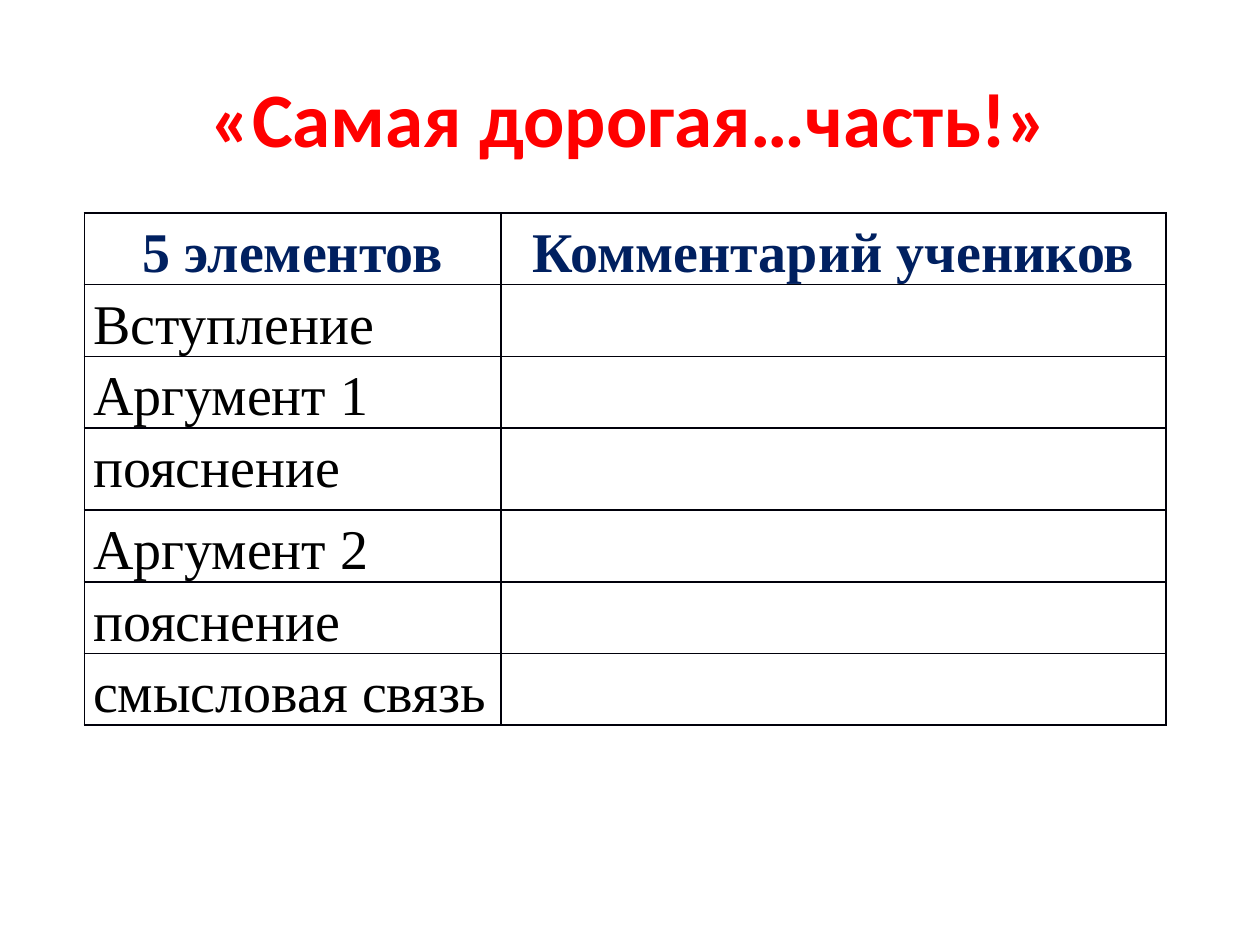
from dataclasses import dataclass

from lxml.etree import SubElement
from pptx import Presentation
from pptx.dml.color import RGBColor
from pptx.enum.text import MSO_ANCHOR, PP_ALIGN
from pptx.oxml.ns import qn
from pptx.util import Pt


@dataclass(frozen=True)
class Theme:
    title: str = "FF0000"
    header: str = "002060"
    text: str = "000000"
    cell: str = "FFFFFF"
    border: str = "00000A"
    title_font: str = "Calibri"
    table_font: str = "Times New Roman"
    title_size: int = 44
    table_size: int = 32


theme = Theme()


def add_run(p, text, font, size, color, bold):
    r = p.add_run()
    r.text = text
    r.font.name = font
    r.font.size = Pt(size)
    r.font.bold = bold
    r.font.color.rgb = RGBColor.from_string(color)


def add_borders(cell):
    tc_pr = cell._tc.get_or_add_tcPr()
    for side in ("lnL", "lnR", "lnT", "lnB"):
        ln = SubElement(tc_pr, qn(f"a:{side}"), w=str(Pt(1)))
        fill = SubElement(ln, qn("a:solidFill"))
        SubElement(fill, qn("a:srgbClr"), val=theme.border)


prs = Presentation()
prs.slide_width, prs.slide_height = Pt(720), Pt(540)
s = prs.slides.add_slide(prs.slide_layouts[5])

# Title
title = s.shapes.title
title.left, title.top, title.width, title.height = Pt(36), Pt(21.6), Pt(648), Pt(90)
tf = title.text_frame
tf.vertical_anchor = MSO_ANCHOR.MIDDLE
p = tf.paragraphs[0]
p.alignment = PP_ALIGN.CENTER
add_run(p, "«Самая дорогая…часть!»", theme.title_font, theme.title_size, theme.title, True)

# Table of essay elements
rows = [
    ("5 элементов", "Комментарий учеников"),
    ("Вступление", ""),
    ("Аргумент 1", ""),
    ("пояснение", ""),
    ("Аргумент 2", ""),
    ("пояснение", ""),
    ("смысловая связь", ""),
]
col_widths = [238.2, 380]
row_heights = [41, 41, 41, 46.8, 41, 41, 41]

table = s.shapes.add_table(
    len(rows), len(col_widths), Pt(48.2), Pt(121.7), Pt(sum(col_widths)), Pt(sum(row_heights))
).table
table.first_row = table.horz_banding = False
for column, width in zip(table.columns, col_widths):
    column.width = Pt(width)

for i, (texts, height) in enumerate(zip(rows, row_heights)):
    table.rows[i].height = Pt(height)
    is_header = i == 0
    for cell, text in zip(table.rows[i].cells, texts):
        add_borders(cell)
        cell.fill.solid()
        cell.fill.fore_color.rgb = RGBColor.from_string(theme.cell)
        if not text:
            continue
        cell.margin_left = cell.margin_right = Pt(5)
        cell.margin_top = cell.margin_bottom = Pt(0)
        p = cell.text_frame.paragraphs[0]
        p.alignment = PP_ALIGN.CENTER if is_header else PP_ALIGN.LEFT
        p.line_spacing = 1.15
        p.space_after = Pt(7.5)
        color = theme.header if is_header else theme.text
        add_run(p, text, theme.table_font, theme.table_size, color, is_header)

prs.save("out.pptx")
